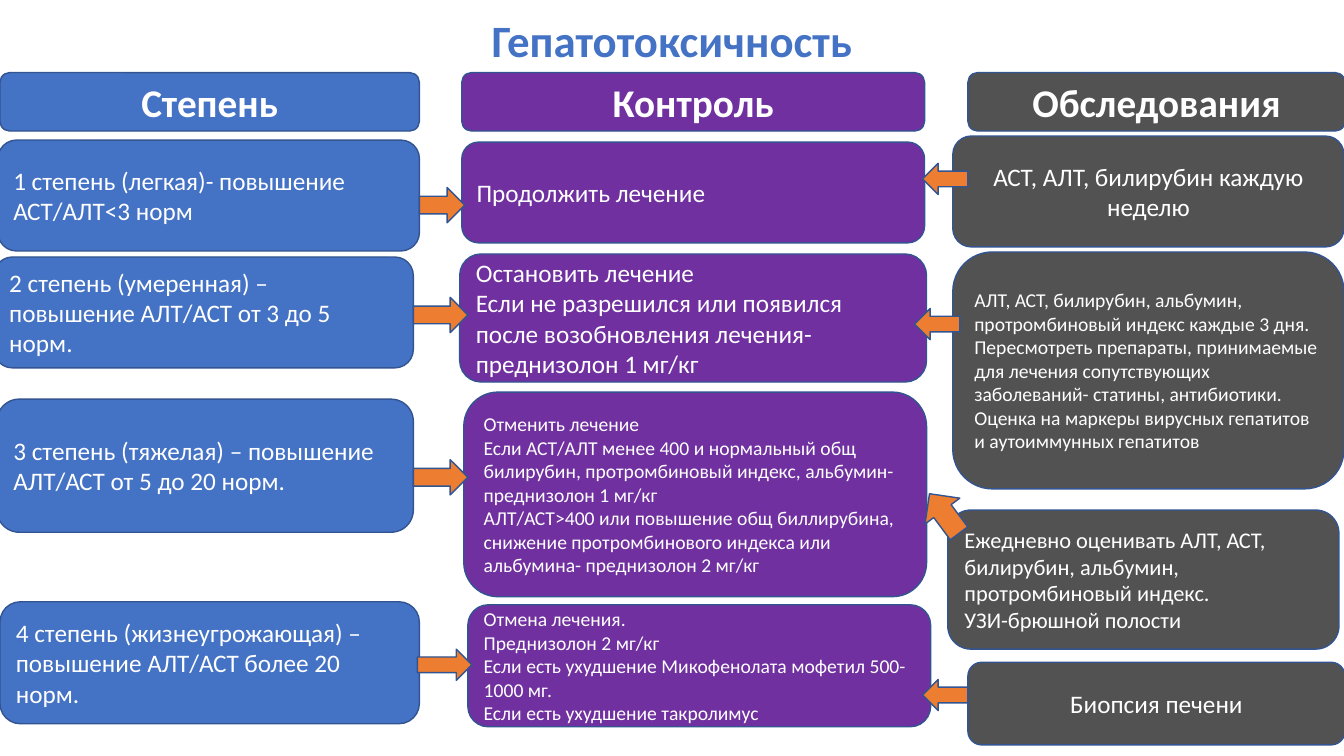
import pptx
import pptx.util
import pptx.dml.color
import pptx.enum.shapes
import pptx.enum.text

Inches = pptx.util.Inches
Pt = pptx.util.Pt
SHAPE = pptx.enum.shapes.MSO_SHAPE
ALIGN = pptx.enum.text.PP_ALIGN
MIDDLE = pptx.enum.text.MSO_ANCHOR.MIDDLE

THEME = {
    "font": "Calibri",
    "blue": "4472C4", "purple": "7030A0", "gray": "525252",
    "orange": "ED7D31", "outline": "325491", "white": "FFFFFF",
    "title": 32, "header": 28, "large": 18, "medium": 16, "small": 14,
}

TITLE = "Гепатотоксичность"
HEADER_TOP, HEADER_HEIGHT = 0.72, 0.58

# Each column: heading, colour, heading left and width, then its boxes as
# (left, top, width, height, type size, alignment, paragraphs).
COLUMNS = [
    ("Степень", "blue", 0, 4.16, [
        (-0.02, 1.39, 4.18, 1.1, "large", ALIGN.LEFT,
         ["1 степень (легкая)- повышение АСТ/АЛТ<3 норм"]),
        (-0.06, 2.55, 4.16, 1.1, "large", ALIGN.LEFT,
         ["2 степень (умеренная) – повышение АЛТ/АСТ от 3 до 5 норм."]),
        (-0.03, 3.96, 4.13, 1.32, "large", ALIGN.LEFT,
         ["3 степень (тяжелая) – повышение АЛТ/АСТ от 5 до 20 норм."]),
        (0, 5.97, 4.16, 1.21, "large", ALIGN.LEFT,
         ["4 степень (жизнеугрожающая) – повышение АЛТ/АСТ более 20 норм."]),
    ]),
    ("Контроль", "purple", 4.58, 4.59, [
        (4.58, 1.41, 4.59, 1, "large", ALIGN.LEFT, ["Продолжить лечение"]),
        (4.56, 2.52, 4.63, 1.27, "large", ALIGN.LEFT,
         ["Остановить лечение",
          "Если не разрешился или появился после возобновления лечения- "
          "преднизолон 1 мг/кг"]),
        (4.6, 3.89, 4.59, 2.03, "small", ALIGN.LEFT,
         ["Отменить лечение",
          "Если АСТ/АЛТ менее 400 и нормальный общ билирубин, "
          "протромбиновый индекс, альбумин- преднизолон 1 мг/кг",
          "АЛТ/АСТ>400 или повышение общ биллирубина, снижение "
          "протромбинового индекса или альбумина- преднизолон 2 мг/кг"]),
        (4.64, 6, 4.59, 1.21, "small", ALIGN.LEFT,
         ["Отмена лечения.",
          "Преднизолон 2 мг/кг",
          "Если есть ухудшение Микофенолата мофетил 500-1000 мг.",
          "Если есть ухудшение такролимус"]),
    ]),
    ("Обследования", "gray", 9.6, 3.74, [
        (9.45, 1.35, 3.88, 1.1, "large", ALIGN.CENTER,
         ["АСТ, АЛТ, билирубин каждую неделю"]),
        (9.45, 2.5, 3.88, 2.35, "small", ALIGN.LEFT,
         ["АЛТ, АСТ, билирубин, альбумин, протромбиновый индекс каждые 3 дня. "
          "Пересмотреть препараты, принимаемые для лечения сопутствующих "
          "заболеваний- статины, антибиотики.",
          "Оценка на маркеры вирусных гепатитов и аутоиммунных гепатитов"]),
        (9.4, 5.06, 3.88, 1.38, "medium", ALIGN.LEFT,
         ["Ежедневно оценивать АЛТ, АСТ, билирубин, альбумин, "
          "протромбиновый индекс.",
          "УЗИ-брюшной полости"]),
        (9.6, 6.57, 3.74, 0.82, "large", ALIGN.CENTER, ["Биопсия печени"]),
    ]),
]

# Arrows: left, top, width, height, rotation
ARROWS = {
    SHAPE.RIGHT_ARROW: [
        (4.16, 1.86, 0.45, 0.35, 0),
        (4.1, 2.95, 0.54, 0.35, 0),
        (4.1, 4.56, 0.54, 0.35, 0),
        (4.14, 6.44, 0.54, 0.31, 0),
    ],
    SHAPE.LEFT_ARROW: [
        (9.15, 1.62, 0.45, 0.31, 0),
        (9.07, 3.06, 0.45, 0.31, 0),
        (9.12, 4.88, 0.49, 0.43, 53.3),
        (9.15, 6.74, 0.45, 0.31, 0),
    ],
}


def color(name):
    return pptx.dml.color.RGBColor.from_string(THEME[name])


def write(shape, lines, size, ink, align, bold=False):
    frame = shape.text_frame
    frame.word_wrap = True
    frame.vertical_anchor = MIDDLE
    frame.text = "\n".join(lines)
    for para in frame.paragraphs:
        para.alignment = align
        for span in para.runs:
            span.font.name = THEME["font"]
            span.font.size = Pt(THEME[size])
            span.font.bold = bold
            span.font.color.rgb = color(ink)


def add_figure(page, kind, place, fill):
    shape = page.shapes.add_shape(kind, *map(Inches, place))
    shape.shadow.inherit = False
    shape.fill.solid()
    shape.fill.fore_color.rgb = color(fill)
    shape.line.color.rgb = color("outline")
    shape.line.width = Pt(1)
    return shape


def add_title(page):
    title = page.shapes.title
    title.left, title.top, title.width, title.height = map(
        Inches, (0, 0, 13.33, 0.86))
    write(title, [TITLE], "title", "blue", ALIGN.CENTER, bold=True)
    title.text_frame.paragraphs[0].line_spacing = 0.9


def add_column(page, heading, fill, left, width, boxes):
    header = add_figure(page, SHAPE.ROUNDED_RECTANGLE,
                        (left, HEADER_TOP, width, HEADER_HEIGHT), fill)
    write(header, [heading], "header", "white", ALIGN.CENTER, bold=True)
    for *place, size, align, lines in boxes:
        box = add_figure(page, SHAPE.ROUNDED_RECTANGLE, place, fill)
        write(box, lines, size, "white", align)


def main():
    deck = pptx.Presentation()
    deck.slide_width, deck.slide_height = Inches(13.33), Inches(7.5)
    page = deck.slides.add_slide(deck.slide_layouts.get_by_name("Title Only"))
    add_title(page)
    for column in COLUMNS:
        add_column(page, *column)
    for kind, arrows in ARROWS.items():
        for *place, angle in arrows:
            add_figure(page, kind, place, "orange").rotation = angle
    deck.save("out.pptx")


if __name__ == "__main__":
    main()
